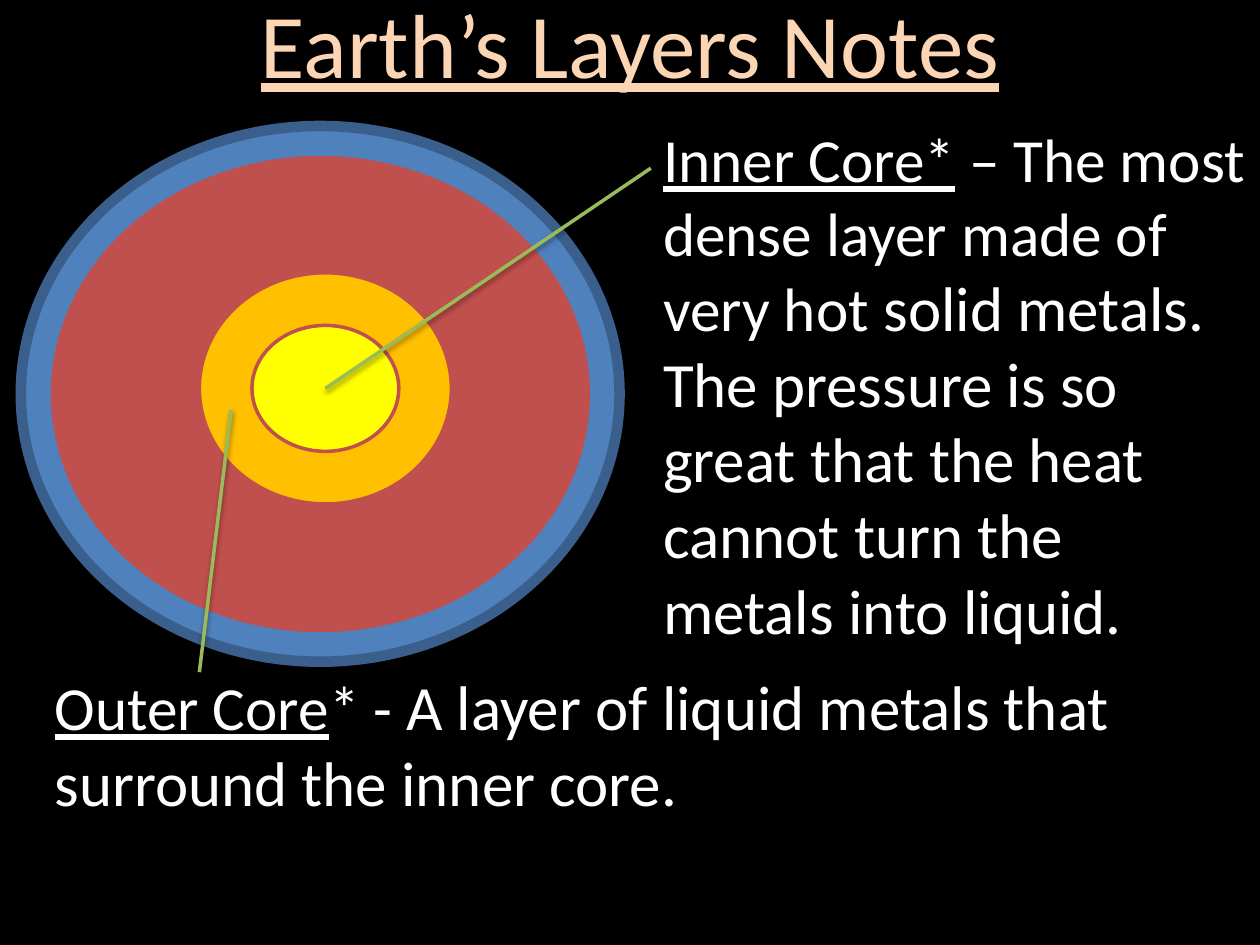
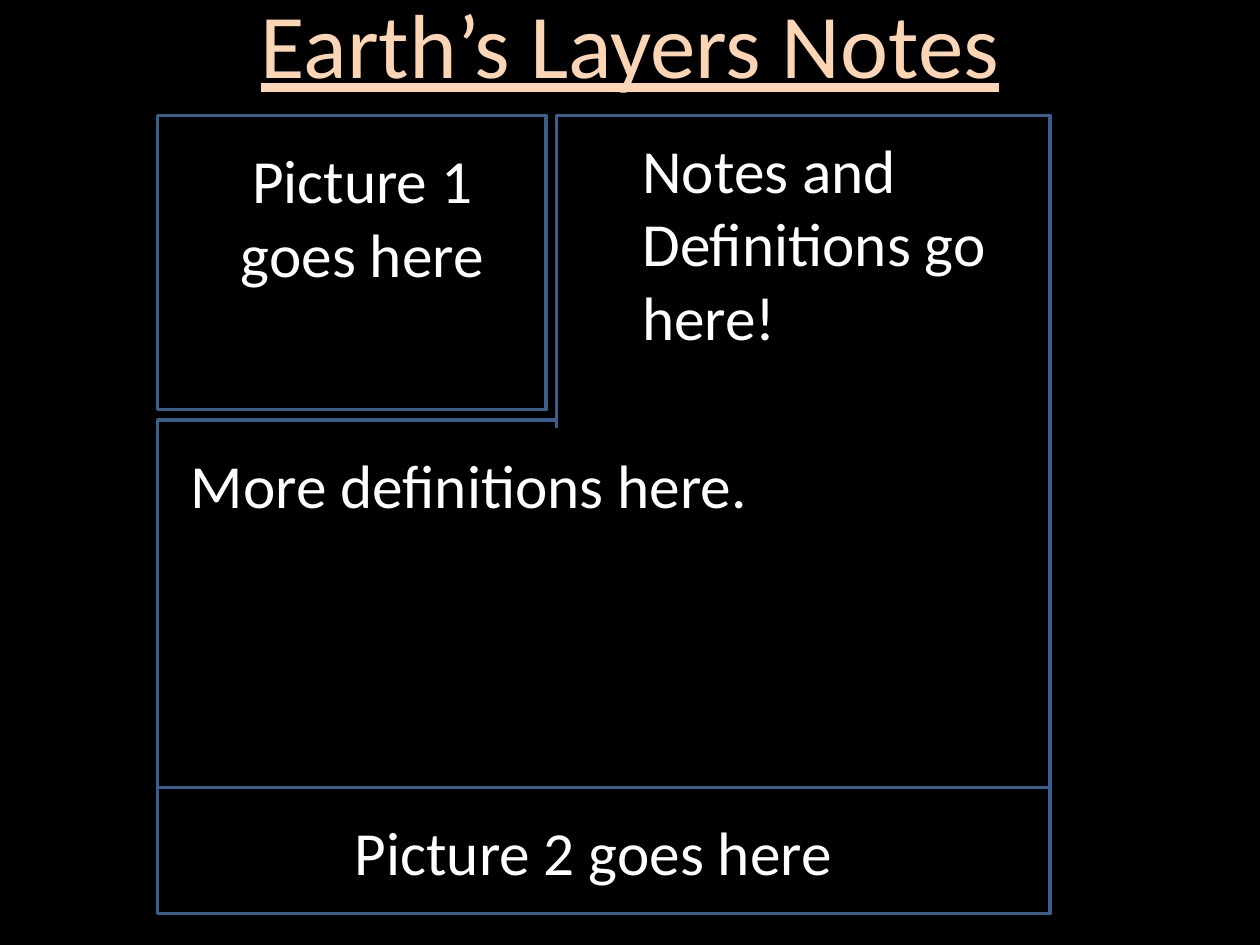
from typing import NamedTuple

from lxml import etree
from pptx import Presentation
from pptx.dml.color import RGBColor
from pptx.enum.shapes import MSO_CONNECTOR, MSO_SHAPE
from pptx.enum.text import MSO_ANCHOR, PP_ALIGN
from pptx.oxml.ns import qn
from pptx.shapes.connector import Connector
from pptx.slide import Slide
from pptx.text.text import _Paragraph
from pptx.util import Cm, Pt

OVAL = MSO_SHAPE.OVAL
RECTANGLE = MSO_SHAPE.RECTANGLE
STRAIGHT = MSO_CONNECTOR.STRAIGHT
LEFT = PP_ALIGN.LEFT
CENTER = PP_ALIGN.CENTER
TOP = MSO_ANCHOR.TOP
MIDDLE = MSO_ANCHOR.MIDDLE

BLACK = RGBColor(0x00, 0x00, 0x00)
WHITE = RGBColor(0xFF, 0xFF, 0xFF)
PEACH = RGBColor(0xFC, 0xD5, 0xB5)
BLUE = RGBColor(0x4F, 0x81, 0xBD)
DARK_BLUE = RGBColor(0x3A, 0x5F, 0x8C)
RED = RGBColor(0xC0, 0x50, 0x4D)
ORANGE = RGBColor(0xFF, 0xC0, 0x00)
YELLOW = RGBColor(0xFF, 0xFF, 0x00)
GREEN = RGBColor(0x9B, 0xBB, 0x59)

FONT = "Calibri"
BLANK_LAYOUT = 6


class Box(NamedTuple):
    """Position and size in centimetres."""

    left: float
    top: float
    width: float
    height: float


class Panel(NamedTuple):
    """A filled and outlined preset shape."""

    box: Box
    fill: RGBColor = BLACK
    line: RGBColor = DARK_BLUE
    line_width: float = 2


class Phrase(NamedTuple):
    """A run of text with its own size and underline."""

    text: str
    size: float = 35
    underline: bool = False


class TextBlock(NamedTuple):
    """A text box holding one paragraph."""

    box: Box
    phrases: list[Phrase]
    alignment: PP_ALIGN = LEFT
    color: RGBColor = WHITE
    anchor: MSO_ANCHOR = TOP
    space_percent: int = 20


class Pointer(NamedTuple):
    """A line from one point to another, in centimetres."""

    start: tuple[float, float]
    end: tuple[float, float]


TITLE = TextBlock(
    Box(1.27, -0.42, 22.86, 2.54),
    [Phrase("Earth’s Layers Notes", 52, True)],
    CENTER, PEACH, MIDDLE, 0,
)

EARTH_LAYERS = [
    Panel(Box(0.42, 2.54, 12.07, 10.8), BLUE, DARK_BLUE, 6),
    Panel(Box(1.06, 3.18, 10.8, 9.53), RED, RED),
    Panel(Box(4.02, 5.5, 5.08, 4.66), ORANGE, RED),
    Panel(Box(5.08, 6.56, 2.96, 2.54), YELLOW, RED),
]
CORE_DEFINITIONS = [
    TextBlock(Box(13.12, 2.33, 12.28, 11), [
        Phrase("Inner Core*", underline=True),
        Phrase(" – The most dense layer made of very hot"),
        Phrase(" solid metals. The pressure is so great that the heat "
               "cannot turn the metals into liquid.", 36),
    ]),
    TextBlock(Box(0.85, 13.34, 23.92, 5.71), [
        Phrase("Outer Core", underline=True),
        Phrase("* - "),
        Phrase("A layer of liquid metals that surround the inner core.", 36),
    ]),
]
CORE_POINTERS = [
    Pointer((13.12, 3.39), (6.56, 7.83)),
    Pointer((4.66, 8.26), (4.02, 13.55)),
]

PAGE_PANELS = [
    Panel(Box(3.18, 8.47, 8.04, 8.47)),
    Panel(Box(3.18, 2.33, 7.83, 5.93)),
    Panel(Box(11.22, 2.33, 9.95, 14.6)),
    Panel(Box(8.88, 8.67, 6.14, 4.66), line=BLACK),
    Panel(Box(8.67, 13.12, 6.14, 3.74), line=BLACK),
    Panel(Box(3.18, 15.88, 17.99, 2.54)),
]
PAGE_LABELS = [
    TextBlock(Box(3.81, 2.75, 6.99, 4.66),
              [Phrase("Picture 1 goes here")], CENTER),
    TextBlock(Box(12.7, 2.54, 8.89, 8.97),
              [Phrase("Notes and Definitions go here!")]),
    TextBlock(Box(3.6, 8.89, 17.15, 8.97),
              [Phrase("More definitions here.")]),
    TextBlock(Box(3.39, 16.3, 17.15, 1.69),
              [Phrase("Picture 2 goes here")], CENTER),
]


def add_panel(slide: Slide, panel: Panel, preset: MSO_SHAPE) -> None:
    """Draw a panel as the given preset shape."""
    shape = slide.shapes.add_shape(preset, *map(Cm, panel.box))
    shape.shadow.inherit = False
    shape.fill.solid()
    shape.fill.fore_color.rgb = panel.fill
    shape.line.color.rgb = panel.line
    shape.line.width = Pt(panel.line_width)


def set_space_before(paragraph: _Paragraph, percent: int) -> None:
    """Set the space before a paragraph as a share of its line height."""
    properties = paragraph._p.get_or_add_pPr()
    spacing = etree.SubElement(properties, qn("a:spcBef"))
    etree.SubElement(spacing, qn("a:spcPct"), val=str(percent * 1000))


def add_text(slide: Slide, block: TextBlock) -> None:
    """Draw a text box run by run."""
    frame = slide.shapes.add_textbox(*map(Cm, block.box)).text_frame
    frame.word_wrap = True
    frame.vertical_anchor = block.anchor
    paragraph = frame.paragraphs[0]
    paragraph.alignment = block.alignment
    set_space_before(paragraph, block.space_percent)
    for phrase in block.phrases:
        run = paragraph.add_run()
        run.text = phrase.text
        run.font.name = FONT
        run.font.size = Pt(phrase.size)
        run.font.underline = phrase.underline
        run.font.color.rgb = block.color


def add_soft_shadow(connector: Connector) -> None:
    """Give a connector a soft black shadow below it."""
    effects = etree.SubElement(connector._element.spPr, qn("a:effectLst"))
    shadow = etree.SubElement(
        effects, qn("a:outerShdw"), blurRad=str(Pt(3.1)), dist=str(Pt(1.6)),
        dir="5400000", rotWithShape="0",
    )
    color = etree.SubElement(shadow, qn("a:srgbClr"), val=str(BLACK))
    etree.SubElement(color, qn("a:alpha"), val="38000")


def add_pointer(slide: Slide, pointer: Pointer) -> None:
    """Draw a green pointer line."""
    connector = slide.shapes.add_connector(
        STRAIGHT, *map(Cm, pointer.start + pointer.end)
    )
    connector.line.color.rgb = GREEN
    connector.line.width = Pt(2)
    add_soft_shadow(connector)


def add_notes_slide(
    presentation: Presentation,
    panels: list[Panel],
    preset: MSO_SHAPE,
    texts: list[TextBlock],
) -> Slide:
    """Add a black slide with the shared title, panels and texts."""
    slide = presentation.slides.add_slide(
        presentation.slide_layouts[BLANK_LAYOUT]
    )
    slide.background.fill.solid()
    slide.background.fill.fore_color.rgb = BLACK
    for panel in panels:
        add_panel(slide, panel, preset)
    for block in [TITLE, *texts]:
        add_text(slide, block)
    return slide


def main() -> None:
    """Build and save the presentation."""
    presentation = Presentation()
    presentation.slide_width = Cm(25.4)
    presentation.slide_height = Cm(19.05)
    layers_slide = add_notes_slide(
        presentation, EARTH_LAYERS, OVAL, CORE_DEFINITIONS
    )
    for pointer in CORE_POINTERS:
        add_pointer(layers_slide, pointer)
    add_notes_slide(presentation, PAGE_PANELS, RECTANGLE, PAGE_LABELS)
    presentation.save("out.pptx")


if __name__ == "__main__":
    main()
